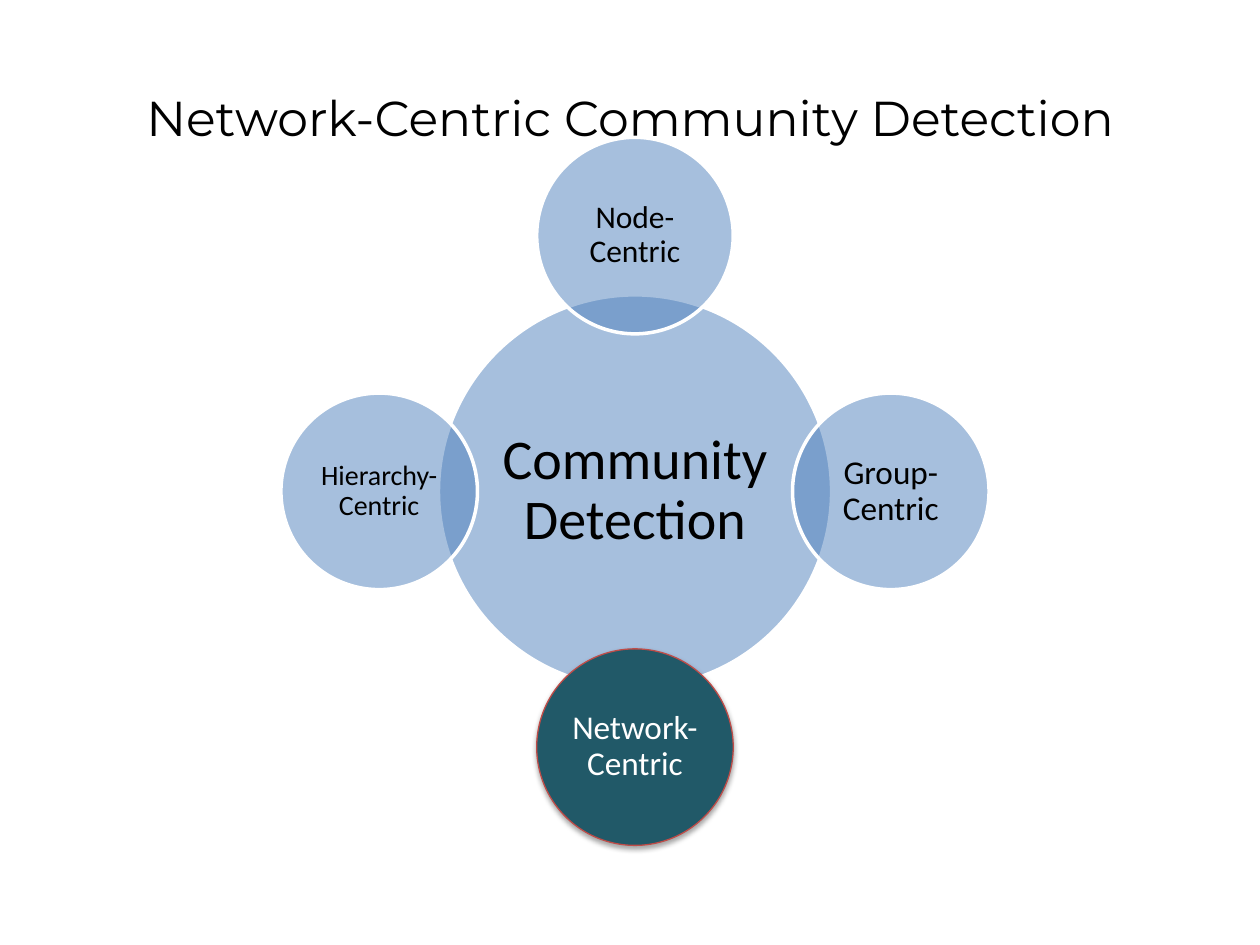
from lxml.etree import SubElement
from pptx import Presentation
from pptx.dml.color import RGBColor
from pptx.enum.shapes import MSO_SHAPE
from pptx.enum.text import MSO_ANCHOR, PP_ALIGN
from pptx.oxml.ns import qn
from pptx.util import Inches, Pt

BLACK = RGBColor(0x00, 0x00, 0x00)
WHITE = RGBColor(0xFF, 0xFF, 0xFF)
BLUE = RGBColor(0x4F, 0x81, 0xBD)
TEAL = RGBColor(0x21, 0x59, 0x68)
RED = RGBColor(0xBF, 0x4C, 0x48)

TITLE = "Network-Centric Community Detection"
HUB = ("Community Detection", 32)
# label, text size, direction from the hub (x, y), highlighted
SATELLITES = [
    ("Node-Centric", 18, (0, -1), False),
    ("Group-Centric", 19, (1, 0), False),
    ("Network-Centric", 19, (0, 1), True),
    ("Hierarchy-Centric", 16, (-1, 0), False),
]

# Radial layout, in inches
CENTER_X, CENTER_Y = 5.04, 3.9
HUB_SIZE = 3.12
SAT_SIZE = HUB_SIZE / 2
ORBIT = 2.03


def add_run(p, text, size, font, color):
    r = p.add_run()
    r.text = text
    r.font.size = Pt(size)
    r.font.name = font
    r.font.color.rgb = color


def set_alpha(color_el, percent):
    SubElement(color_el, qn("a:alpha"), val=str(percent * 1000))


def add_shadow(sp):
    effects = sp._element.spPr.find(qn("a:effectLst"))
    shadow = SubElement(effects, qn("a:outerShdw"), blurRad=str(Pt(3.1)),
                        dist=str(Pt(1.8)), dir="5400000", rotWithShape="0")
    set_alpha(SubElement(shadow, qn("a:srgbClr"), val=str(BLACK)), 35)


def add_circle(shapes, text, text_size, cx, cy, size, highlighted=False):
    sp = shapes.add_shape(MSO_SHAPE.OVAL, Inches(cx - size / 2),
                          Inches(cy - size / 2), Inches(size), Inches(size))
    sp.shadow.inherit = False
    sp.fill.solid()
    sp.fill.fore_color.rgb = TEAL if highlighted else BLUE
    sp.line.color.rgb = RED if highlighted else WHITE
    sp.line.width = Pt(0.75 if highlighted else 2)
    if highlighted:
        add_shadow(sp)
    else:
        set_alpha(sp._element.spPr.find(qn("a:solidFill"))[0], 50)

    tf = sp.text_frame
    tf.word_wrap = True
    tf.vertical_anchor = MSO_ANCHOR.MIDDLE
    tf.margin_left = tf.margin_right = Inches(0.03)
    tf.margin_top = tf.margin_bottom = Inches(0.03)
    p = tf.paragraphs[0]
    p.alignment = PP_ALIGN.CENTER
    p.line_spacing = 0.9
    add_run(p, text, text_size, "Calibri", WHITE if highlighted else BLACK)


prs = Presentation()
prs.slide_width, prs.slide_height = Inches(10), Inches(7.5)
s = prs.slides.add_slide(prs.slide_layouts[5])

# Title
title = s.shapes.title
title.left, title.top = Inches(0.5), Inches(0.3)
title.width, title.height = Inches(9), Inches(1.25)
title.text_frame.vertical_anchor = MSO_ANCHOR.MIDDLE
p = title.text_frame.paragraphs[0]
p.alignment = PP_ALIGN.CENTER
add_run(p, TITLE, 28, "Montserrat", BLACK)

# Radial diagram: hub first, then the circles around it
diagram = s.shapes.add_group_shape()
add_circle(diagram.shapes, *HUB, CENTER_X, CENTER_Y, HUB_SIZE)
for label, text_size, (dx, dy), highlighted in SATELLITES:
    add_circle(diagram.shapes, label, text_size, CENTER_X + dx * ORBIT,
               CENTER_Y + dy * ORBIT, SAT_SIZE, highlighted)

prs.save("out.pptx")
